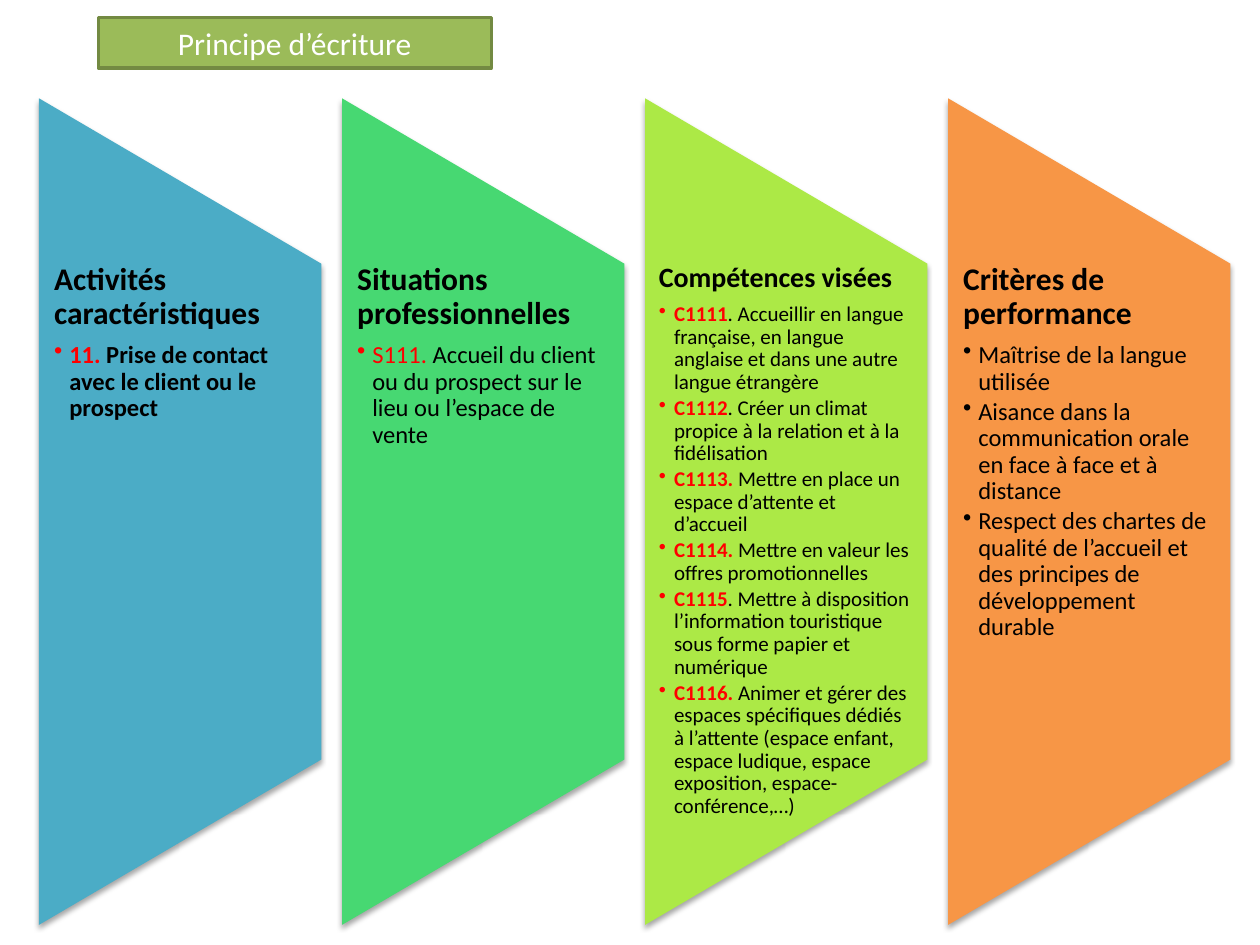
from dataclasses import dataclass

from lxml.etree import SubElement
from pptx import Presentation
from pptx.dml.color import RGBColor
from pptx.enum.shapes import MSO_SHAPE
from pptx.enum.text import MSO_ANCHOR, MSO_AUTO_SIZE, PP_ALIGN
from pptx.oxml.ns import qn
from pptx.util import Inches, Pt

BLACK = RGBColor(0x00, 0x00, 0x00)
WHITE = RGBColor(0xFF, 0xFF, 0xFF)
RED = RGBColor(0xFF, 0x00, 0x00)
BLUE = RGBColor(0x4B, 0xAC, 0xC6)
GREEN = RGBColor(0x47, 0xD8, 0x72)
LIME = RGBColor(0xAC, 0xE9, 0x46)
ORANGE = RGBColor(0xF7, 0x96, 0x46)
OLIVE = RGBColor(0x9B, 0xBB, 0x59)
DARK_OLIVE = RGBColor(0x73, 0x8A, 0x42)

FONT = "Calibri"
LEFT, PITCH, WIDTH = 0.31, 2.405, 2.24
PANEL_HEIGHT, PANEL_MIDDLE = 6.56, 4.06
TEXT_TOP, TEXT_HEIGHT = 2.09, 3.94


@dataclass
class Item:
    code: str
    text: str
    code_bold: bool = True
    text_bold: bool = False


@dataclass
class Column:
    heading: str
    fill: RGBColor
    items: list[Item]
    heading_size: int = 18
    item_size: int = 14
    inset: float = 0.12


COLUMNS = [
    Column("Activités caractéristiques", BLUE, [
        Item("11.", " Prise de contact avec le client ou le prospect", text_bold=True),
    ]),
    Column("Situations professionnelles", GREEN, [
        Item("S111.", " Accueil du client ou du prospect sur le lieu ou l’espace de vente",
             code_bold=False),
    ]),
    Column("Compétences visées", LIME, [
        Item("C1111", ". Accueillir en langue française, en langue anglaise "
                      "et dans une autre langue étrangère"),
        Item("C1112", ". Créer un climat propice à la relation et à la fidélisation"),
        Item("C1113.", " Mettre en place un espace d’attente et d’accueil"),
        Item("C1114.", " Mettre en valeur les offres promotionnelles"),
        Item("C1115", ". Mettre à disposition l’information touristique "
                      "sous forme papier et numérique"),
        Item("C1116.", " Animer et gérer des espaces spécifiques dédiés à l’attente "
                       "(espace enfant, espace ludique, espace exposition, "
                       "espace-conférence,…)"),
    ], heading_size=16, item_size=12, inset=0.11),
    Column("Critères de performance", ORANGE, [
        Item("", "Maîtrise de la langue utilisée"),
        Item("", "Aisance dans la communication orale en face à face et à distance"),
        Item("", "Respect des chartes de qualité de l’accueil et des principes "
                 "de développement durable"),
    ]),
]


def add_run(p, text: str, size: int, color: RGBColor, bold: bool) -> None:
    r = p.add_run()
    r.text = text
    for name, value in {"name": FONT, "size": Pt(size), "bold": bold}.items():
        setattr(r.font, name, value)
    r.font.color.rgb = color


def set_spacing(p, after: float) -> None:
    p.line_spacing = 0.9
    p.space_after = Pt(round(after, 1))


def add_bullet(p) -> None:
    pPr = p._p.get_or_add_pPr()
    pPr.set("marL", str(Inches(0.12)))
    pPr.set("indent", str(Inches(-0.12)))
    SubElement(pPr, qn("a:buChar"), char="•")


def add_shadow(sp) -> None:
    sp.shadow.inherit = False
    effects = sp._element.spPr.find(qn("a:effectLst"))
    shadow = SubElement(effects, qn("a:outerShdw"), blurRad=str(Pt(3.1)),
                        dist=str(Pt(1.8)), dir="5400000", rotWithShape="0")
    color = SubElement(shadow, qn("a:srgbClr"), val=str(BLACK))
    SubElement(color, qn("a:alpha"), val="35000")


def add_panel(s, left: float, fill: RGBColor) -> None:
    sp = s.shapes.add_shape(
        MSO_SHAPE.FLOWCHART_MANUAL_OPERATION,
        Inches(left + (WIDTH - PANEL_HEIGHT) / 2), Inches(PANEL_MIDDLE - WIDTH / 2),
        Inches(PANEL_HEIGHT), Inches(WIDTH))
    sp.rotation = 270
    sp.fill.solid()
    sp.fill.fore_color.rgb = fill
    sp.line.fill.background()
    add_shadow(sp)


def add_list(s, left: float, column: Column) -> None:
    box = s.shapes.add_textbox(Inches(left), Inches(TEXT_TOP),
                               Inches(WIDTH), Inches(TEXT_HEIGHT))
    tf = box.text_frame
    inset = Inches(column.inset)
    layout = {"word_wrap": True, "margin_left": inset, "margin_right": inset,
              "margin_top": 0, "margin_bottom": 0, "vertical_anchor": MSO_ANCHOR.TOP}
    for name, value in layout.items():
        setattr(tf, name, value)
    p = tf.paragraphs[0]
    set_spacing(p, 0.35 * column.heading_size)
    add_run(p, column.heading, column.heading_size, BLACK, True)
    for item in column.items:
        p = tf.add_paragraph()
        p.level = 1
        set_spacing(p, 0.15 * column.item_size)
        add_bullet(p)
        if item.code:
            add_run(p, item.code, column.item_size, RED, item.code_bold)
        add_run(p, item.text, column.item_size, BLACK, item.text_bold)


def add_title(s) -> None:
    title = s.shapes.title
    place = {"left": 0.78, "top": 0.14, "width": 3.12, "height": 0.4}
    for name, value in place.items():
        setattr(title, name, Inches(value))
    title.fill.solid()
    title.fill.fore_color.rgb = OLIVE
    title.line.color.rgb = DARK_OLIVE
    title.line.width = Pt(2)
    tf = title.text_frame
    tf.auto_size = MSO_AUTO_SIZE.NONE
    tf.vertical_anchor = MSO_ANCHOR.MIDDLE
    p = tf.paragraphs[0]
    p.alignment = PP_ALIGN.CENTER
    add_run(p, "Principe d’écriture", 18, WHITE, False)


def main() -> None:
    prs = Presentation()
    prs.slide_width, prs.slide_height = Inches(10), Inches(7.5)
    s = prs.slides.add_slide(prs.slide_layouts[5])
    add_title(s)
    for i, column in enumerate(COLUMNS):
        left = LEFT + i * PITCH
        add_panel(s, left, column.fill)
        add_list(s, left, column)
    prs.save("out.pptx")


if __name__ == "__main__":
    main()
